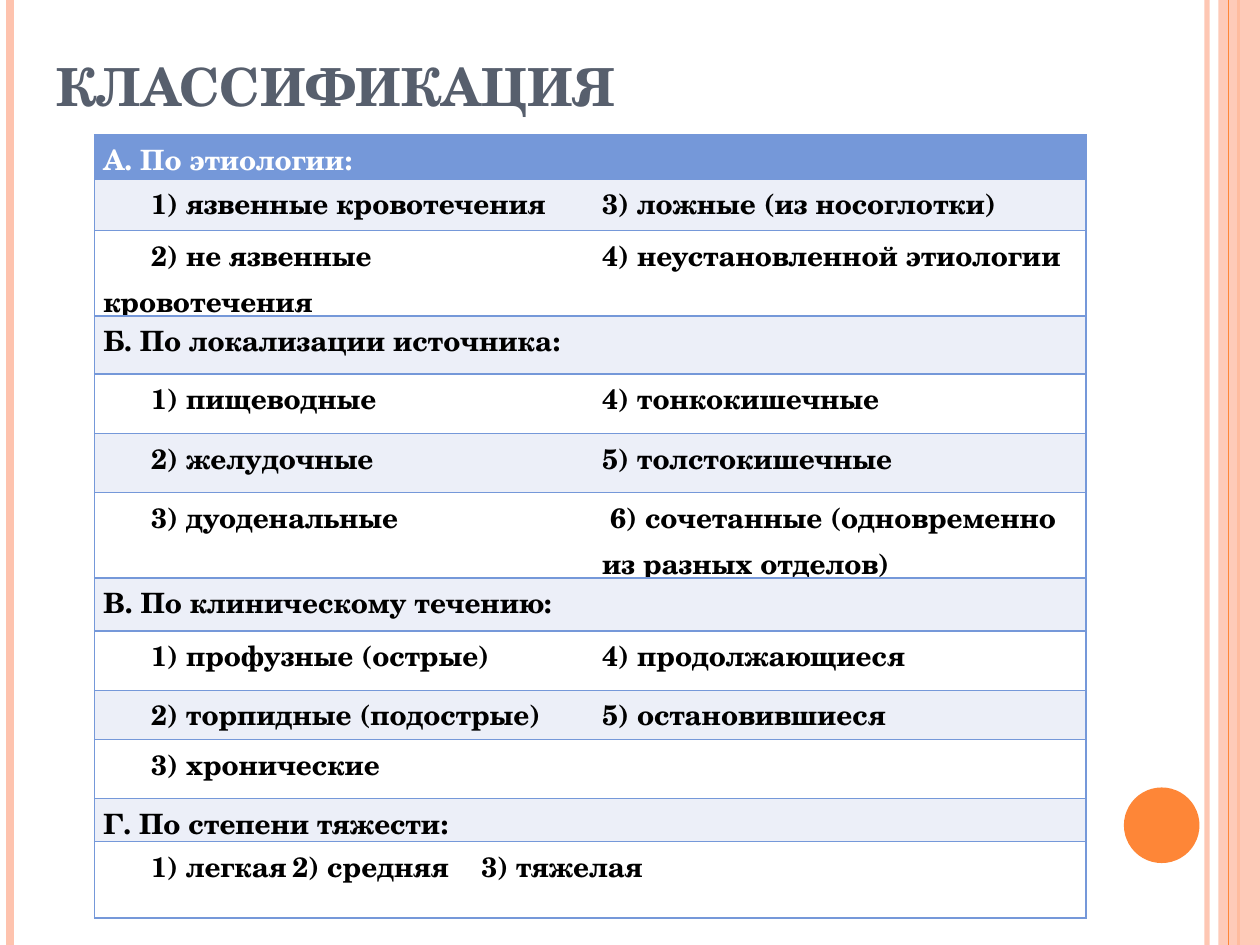
from dataclasses import dataclass

from lxml.etree import SubElement
from pptx import Presentation
from pptx.dml.color import RGBColor
from pptx.enum.shapes import MSO_CONNECTOR, MSO_SHAPE
from pptx.enum.text import MSO_ANCHOR
from pptx.oxml.ns import qn
from pptx.util import Inches, Pt


@dataclass(frozen=True)
class Theme:
    font: str = "TeX Gyre Schola"
    title_size: int = 30
    body_size: int = 16
    title: str = "575F6D"
    text: str = "000000"
    header_text: str = "FFFFFF"
    blue: str = "7598D9"
    bands: tuple = ("FFFFFF", "ECEFF8")
    peach: str = "FEC3AE"
    orange: str = "FE8637"


theme = Theme()


def add_run(paragraph, text, size, color):
    run = paragraph.add_run()
    run.text = text
    run.font.name = theme.font
    run.font.size = Pt(size)
    run.font.bold = True
    run.font.color.rgb = RGBColor.from_string(color)
    return run


def set_alpha(properties, percent):
    """Make the first solid colour under the given shape properties translucent."""
    color = next(properties.iter(qn("a:srgbClr")))
    SubElement(color, qn("a:alpha"), val=str(percent * 1000))


presentation = Presentation()
presentation.slide_width = Inches(10)
presentation.slide_height = Inches(7.5)
column = presentation.slide_width / 100
row = presentation.slide_height / 75
slide = presentation.slides.add_slide(presentation.slide_layouts[6])

# Side stripes: column, colour, width, opacity; None marks the wide band
stripes = [
    (95.8, theme.peach, 3, 93),
    (0.8, theme.peach, 4.5, 100),
    (98.3, theme.orange, 1.5, 100),
    (96.7, theme.peach, None, 87),
    (97.5, theme.orange, 0.75, 100),
]
for position, color, width, opacity in stripes:
    left = int(position * column)
    if width is None:
        shape = slide.shapes.add_shape(
            MSO_SHAPE.RECTANGLE, left, 0,
            presentation.slide_width - left, presentation.slide_height)
        shape.shadow.inherit = False
        shape.fill.solid()
        shape.fill.fore_color.rgb = RGBColor.from_string(color)
        shape.line.fill.background()
    else:
        shape = slide.shapes.add_connector(
            MSO_CONNECTOR.STRAIGHT, left, 0, left, presentation.slide_height)
        shape.line.color.rgb = RGBColor.from_string(color)
        shape.line.width = Pt(width)
        SubElement(shape._element.spPr, qn("a:effectLst"))
    if opacity < 100:
        set_alpha(shape._element.spPr, opacity)

circle = slide.shapes.add_shape(
    MSO_SHAPE.OVAL, int(89.2 * column), int(62.5 * row), int(6 * column), int(6 * row))
circle.shadow.inherit = False
circle.fill.solid()
circle.fill.fore_color.rgb = RGBColor.from_string(theme.orange)
circle.line.fill.background()

title = slide.shapes.add_textbox(
    int(3.5 * column), int(2.9 * row), int(49.7 * column), int(6.9 * row))
title.text_frame.word_wrap = True
title.text_frame.vertical_anchor = MSO_ANCHOR.BOTTOM
title_run = add_run(
    title.text_frame.paragraphs[0], "КЛАССИФИКАЦИЯ", theme.title_size, theme.title)
title_run._r.get_or_add_rPr().set("cap", "small")

# Table rows: height in grid rows, left text, right text
item_indent = 3.8
tab_stops = (34.9, 63.9)
rows = [
    (3.5, "А. По этиологии:", ""),
    (4.1, "1) язвенные кровотечения", "3) ложные (из носоглотки)"),
    (6.8, "2) не язвенные кровотечения", "4) неустановленной этиологии"),
    (4.6, "Б. По локализации источника:", ""),
    (4.7, "1) пищеводные", "4) тонкокишечные"),
    (4.7, "2) желудочные", "5) толстокишечные"),
    (6.8, "3) дуоденальные", " 6) сочетанные (одновременно из разных отделов)"),
    (4.2, "В. По клиническому течению:", ""),
    (4.7, "1) профузные (острые)", "4) продолжающиеся"),
    (3.9, "2) торпидные (подострые)", "5) остановившиеся"),
    (4.7, "3) хронические", ""),
    (3.4, "Г. По степени тяжести:", ""),
    (6.1, "1) легкая\t2) средняя\t3) тяжелая", ""),
]
table = slide.shapes.add_table(
    len(rows), 2, int(7.5 * column), int(10.7 * row), int(78.7 * column),
    int(sum(height for height, *_ in rows) * row)).table
for table_column, width in zip(table.columns, (39.6, 39.1)):
    table_column.width = int(width * column)
last = len(rows) - 1
table.cell(last, 0).merge(table.cell(last, 1))

for row_index, (height, *texts) in enumerate(rows):
    table.rows[row_index].height = int(height * row)
    is_header = row_index == 0
    fill = theme.blue if is_header else theme.bands[row_index % 2]
    text_color = theme.header_text if is_header else theme.text
    for column_index, text in enumerate(texts):
        cell = table.cell(row_index, column_index)
        cell.margin_left = cell.margin_right = Inches(0.07)
        cell.margin_top = cell.margin_bottom = 0

        outer_side = "a:lnR" if column_index or row_index == last else "a:lnL"
        sides = {outer_side, "a:lnT", "a:lnB"}
        if row_index == last:
            sides.add("a:lnL")
        cell_properties = cell._tc.get_or_add_tcPr()
        for side in ("a:lnL", "a:lnR", "a:lnT", "a:lnB"):
            visible = side in sides
            border = SubElement(cell_properties, qn(side), w=str(Pt(1) if visible else 0))
            paint = SubElement(border, qn("a:solidFill" if visible else "a:noFill"))
            if visible:
                SubElement(paint, qn("a:srgbClr"), val=theme.blue)
        cell.fill.solid()
        cell.fill.fore_color.rgb = RGBColor.from_string(fill)

        if not text:
            continue
        paragraph = cell.text_frame.paragraphs[0]
        paragraph.line_spacing = 1.07
        paragraph_properties = paragraph._p.get_or_add_pPr()
        if column_index == 0 and text[0].isdigit():
            paragraph_properties.set("marL", "0")
            paragraph_properties.set("indent", str(int(item_indent * column)))
        if "\t" in text:
            tabs = SubElement(paragraph_properties, qn("a:tabLst"))
            for stop in tab_stops:
                SubElement(tabs, qn("a:tab"), pos=str(int(stop * column)), algn="l")
        add_run(paragraph, text, theme.body_size, text_color)

presentation.save("out.pptx")
